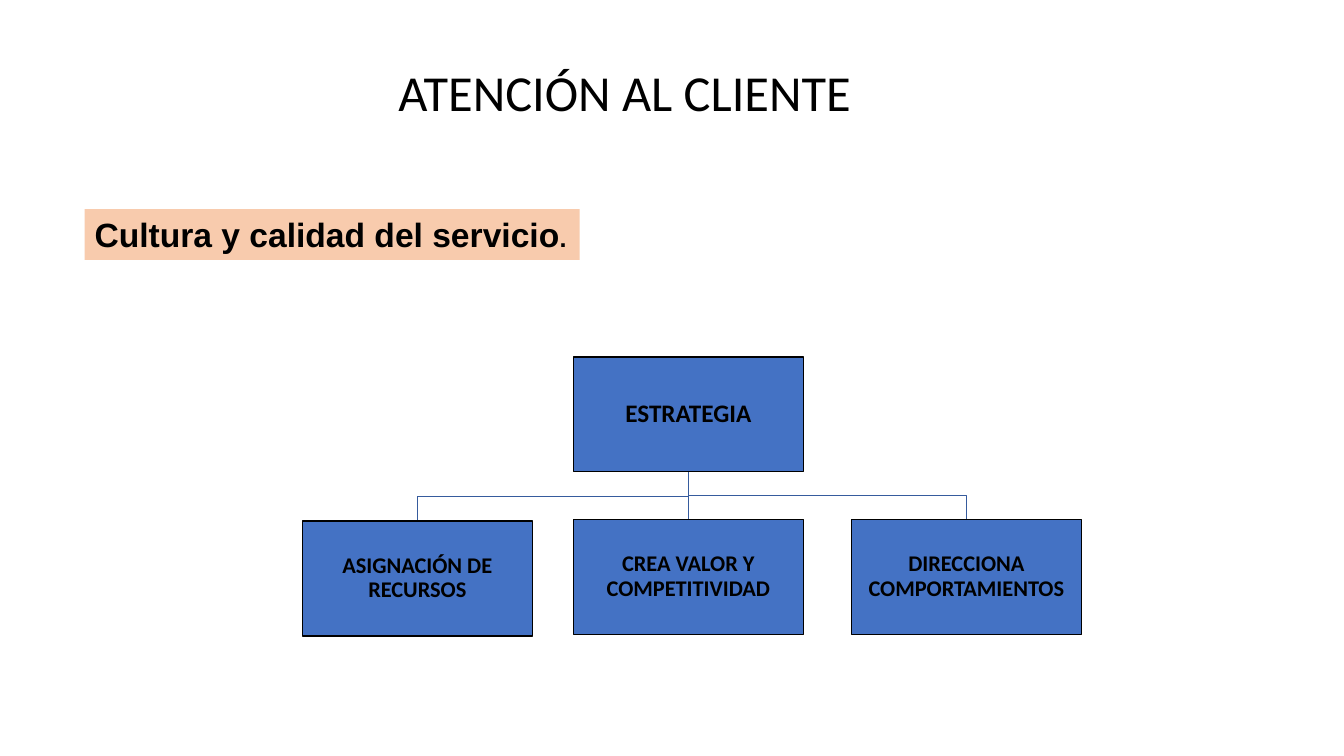
from dataclasses import dataclass

from lxml import etree
from pptx import Presentation
from pptx import util as u
from pptx.dml.color import RGBColor
from pptx.enum import shapes, text
from pptx.oxml import ns


@dataclass(frozen=True)
class Theme:
    ink: str = "000000"
    box_fill: str = "4472C4"
    link: str = "365B9D"
    highlight: str = "F8CBAD"
    heading_font: str = "Calibri"
    subtitle_font: str = "Arial"
    title_size: int = 36
    subtitle_size: int = 24
    root_size: int = 18
    child_size: int = 16
    line_width: int = 1


def add_text(paragraph, content, *, font, size, color, bold=False):
    run = paragraph.add_run()
    run.text = content
    run.font.name = font
    run.font.size = u.Pt(size)
    run.font.bold = bold
    run.font.color.rgb = RGBColor.from_string(color)


class SlideBuilder:
    def __init__(self, slide, theme):
        self.slide = slide
        self.theme = theme

    def set_frame(self, shape, anchor, inset_x, inset_y):
        frame = shape.text_frame
        frame.word_wrap = True
        frame.vertical_anchor = anchor
        frame.margin_left = frame.margin_right = u.Pt(inset_x)
        frame.margin_top = frame.margin_bottom = u.Pt(inset_y)
        return frame.paragraphs[0]

    def rectangle(self, left, top, width, height, fill, line=None):
        shape = self.slide.shapes.add_shape(
            shapes.MSO_SHAPE.RECTANGLE, u.Pt(left), u.Pt(top), u.Pt(width), u.Pt(height))
        shape.shadow.inherit = False
        shape.fill.solid()
        shape.fill.fore_color.rgb = RGBColor.from_string(fill)
        if line:
            self.outline(shape, line)
        else:
            shape.line.fill.background()
        return shape

    def outline(self, shape, color):
        shape.line.color.rgb = RGBColor.from_string(color)
        shape.line.width = u.Pt(self.theme.line_width)

    def title(self, content, left, top, width, height):
        shape = self.slide.shapes.add_textbox(
            u.Pt(left), u.Pt(top), u.Pt(width), u.Pt(height))
        paragraph = self.set_frame(shape, text.MSO_ANCHOR.MIDDLE, 7.2, 3.6)
        paragraph.line_spacing = 0.9
        add_text(paragraph, content, font=self.theme.heading_font,
                 size=self.theme.title_size, color=self.theme.ink)

    def subtitle(self, content, ending, left, top, width, height):
        shape = self.rectangle(left, top, width, height, self.theme.highlight)
        paragraph = self.set_frame(shape, text.MSO_ANCHOR.TOP, 7.2, 3.6)
        paragraph.alignment = text.PP_ALIGN.LEFT
        style = dict(font=self.theme.subtitle_font, color=self.theme.ink, bold=True)
        add_text(paragraph, content, size=self.theme.subtitle_size, **style)
        add_text(paragraph, ending, size=self.theme.root_size, **style)

    def box(self, content, left, top, width, height, size):
        shape = self.rectangle(left, top, width, height, self.theme.box_fill, self.theme.ink)
        paragraph = self.set_frame(shape, text.MSO_ANCHOR.MIDDLE, 0.8, 0.8)
        paragraph.alignment = text.PP_ALIGN.CENTER
        paragraph.line_spacing = 0.9
        add_text(paragraph, content, font=self.theme.heading_font, size=size,
                 color=self.theme.ink, bold=True)

    def straight_link(self, x, top, bottom):
        line = self.slide.shapes.add_connector(
            shapes.MSO_CONNECTOR.STRAIGHT, u.Pt(x), u.Pt(top), u.Pt(x), u.Pt(bottom))
        self.outline(line, self.theme.link)
        etree.SubElement(line._element.spPr, ns.qn("a:effectLst"))

    def elbow_link(self, start_x, top, end_x, bottom):
        middle = (top + bottom) / 2
        corners = [(start_x, middle), (end_x, middle), (end_x, bottom)]
        builder = self.slide.shapes.build_freeform(u.Pt(start_x), u.Pt(top))
        builder.add_line_segments([(u.Pt(x), u.Pt(y)) for x, y in corners], close=False)
        shape = builder.convert_to_shape()
        shape.shadow.inherit = False
        shape.fill.background()
        self.outline(shape, self.theme.link)


def main():
    presentation = Presentation()
    presentation.slide_width, presentation.slide_height = u.Pt(960), u.Pt(540)
    slide = presentation.slides.add_slide(presentation.slide_layouts[6])
    theme = Theme()
    builder = SlideBuilder(slide, theme)

    # Headings
    builder.title("ATENCIÓN AL CLIENTE", 277.5, 31.7, 352.5, 72.7)
    builder.subtitle("Cultura y calidad del servicio", ".", 60.5, 149.3, 353.5, 36.3)

    # Organisation chart
    box_width, box_height = 164.2, 82.1
    root_left, root_top = 409.6, 254.9
    root_x, root_bottom = root_left + box_width / 2, root_top + box_height
    children = [
        ("ASIGNACIÓN DE RECURSOS", 216, 372.2),
        ("CREA VALOR Y COMPETITIVIDAD", root_left, 371),
        ("DIRECCIONA COMPORTAMIENTOS", 608.2, 371),
    ]

    # Links sit behind the boxes
    for _, left, top in children:
        if left == root_left:
            builder.straight_link(root_x, root_bottom, top)
        else:
            builder.elbow_link(root_x, root_bottom, left + box_width / 2, top)

    # Boxes
    builder.box("ESTRATEGIA", root_left, root_top, box_width, box_height, theme.root_size)
    for label, left, top in children:
        builder.box(label, left, top, box_width, box_height, theme.child_size)

    presentation.save("out.pptx")


if __name__ == "__main__":
    main()
